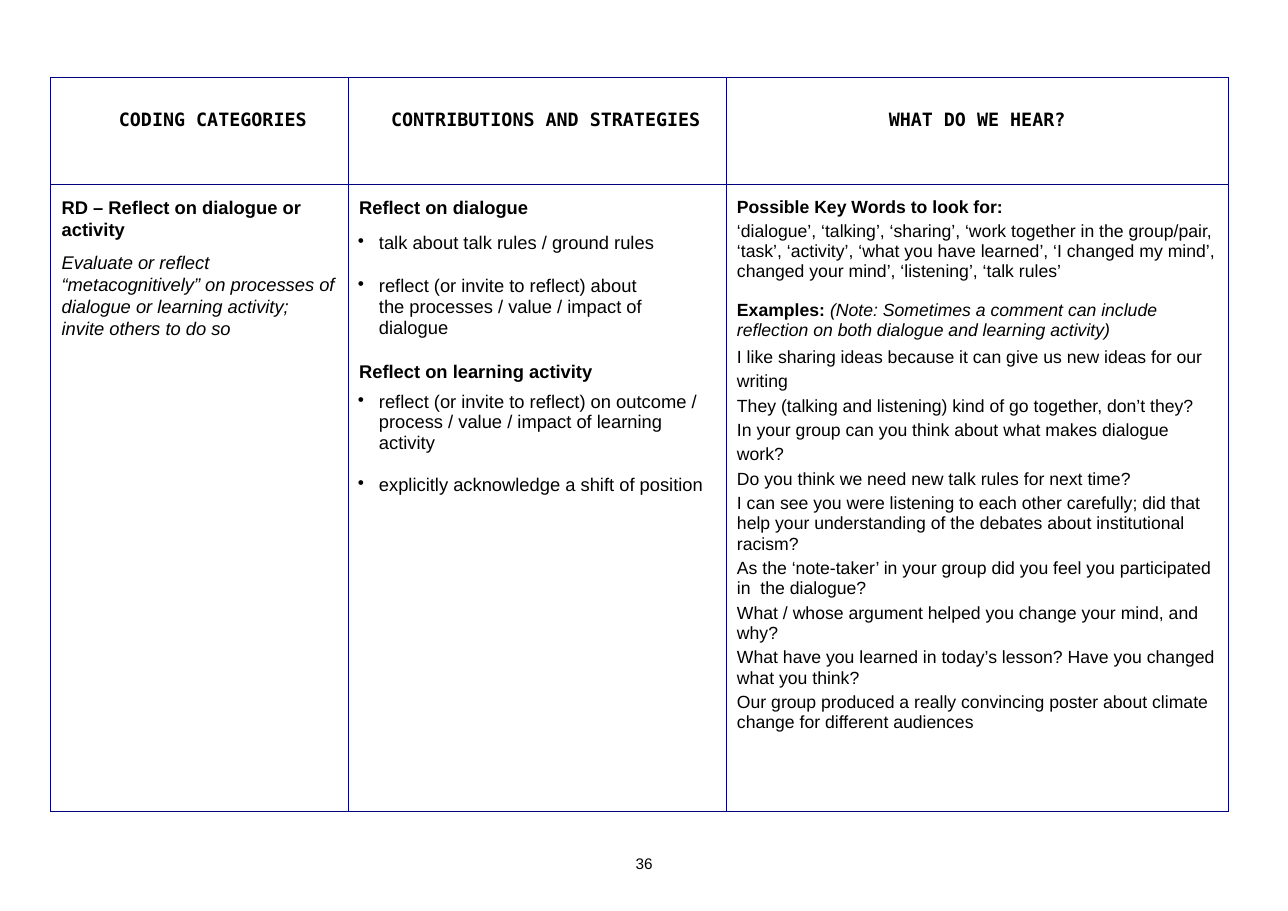
"""Build the dialogue coding table page for reflection on dialogue or activity."""
from lxml import etree
from pptx import Presentation
from pptx import util as u
from pptx.dml.color import RGBColor
from pptx.enum import text
from pptx.oxml.ns import qn

HUES = {"ink": "000000", "rule": "000080"}
SANS, MONO = "Arial", "DejaVu Sans Mono"
W, H = u.Inches(11.69), u.Inches(8.27)
PAD = u.Inches(0.1)
NBSP = chr(160)

deck = Presentation()
deck.slide_width, deck.slide_height = W, H
page = deck.slides.add_slide(deck.slide_layouts[6])


def put(frame, line, lead="", face=SANS, size=12, bold=False, slant=False,
        left=PAD, hang=0, gap=0, after=0, pitch=1.0, mark="", align=None):
    para = frame.paragraphs[0] if not frame.text else frame.add_paragraph()
    para.alignment = align
    para.space_before, para.space_after = u.Pt(gap), u.Pt(after)
    para.line_spacing = pitch
    props = para._p.get_or_add_pPr()
    props.set("marL", str(int(left)))
    props.set("indent", str(int(-hang)))
    if mark:
        etree.SubElement(props, qn("a:buChar")).set("char", mark)
    else:
        etree.SubElement(props, qn("a:buNone"))
    for words, heavy, lean in ((lead, True, False), (line, bold, slant)):
        if words:
            run = para.add_run()
            run.text = words
            font = run.font
            font.name, font.size = face, u.Pt(size)
            font.bold, font.italic = heavy, lean
            font.color.rgb = RGBColor.from_string(HUES["ink"])


def edge(cell):
    props = cell._tc.get_or_add_tcPr()
    for side in "LRTB":
        rule = etree.SubElement(props, qn(f"a:ln{side}"), w=str(u.Pt(0.48)))
        fill = etree.SubElement(rule, qn("a:solidFill"))
        etree.SubElement(fill, qn("a:srgbClr"), val=HUES["rule"])
    cell.fill.background()


cols = [int(W * share / 100) for share in (23.1, 29.34, 39.01)]
rows = [int(H * share / 100) for share in (11.73, 68.92)]
grid = page.shapes.add_table(2, 3, int(W * 3.93 / 100), int(H * 8.46 / 100),
                             sum(cols), sum(rows)).table
grid.first_row = grid.horz_banding = False
for col, wide in zip(grid.columns, cols):
    col.width = wide
for row, tall in zip(grid.rows, rows):
    row.height = tall

tops = ((0.29, 0.29, 0.29), (0.11, 0.13, 0.12))
rights = ((0, 0, 0), (0.11, 0.13, 0.12))
for r in range(2):
    for c in range(3):
        cell = grid.cell(r, c)
        cell.margin_left = cell.margin_bottom = 0
        cell.margin_top = u.Inches(tops[r][c])
        cell.margin_right = u.Inches(rights[r][c])
        edge(cell)

heads = (
    ("CODING CATEGORIES", 0.62, None),
    ("CONTRIBUTIONS AND STRATEGIES", 0.39, None),
    ("WHAT DO WE HEAR?", 0, text.PP_ALIGN.CENTER),
)
for c, (title, left, align) in enumerate(heads):
    put(grid.cell(0, c).text_frame, title, face=MONO, bold=True,
        left=u.Inches(left), align=align)

code, plan, talk = [grid.cell(1, c).text_frame for c in range(3)]

put(code, "RD – Reflect on dialogue or activity", bold=True, pitch=1.07)
put(code, "Evaluate or reflect “metacognitively” on processes of dialogue or "
    "learning activity; invite others to do so", slant=True, gap=7.7, pitch=1.07)

item = dict(left=u.Inches(0.28), hang=u.Inches(0.19), mark="•")
put(plan, "Reflect on dialogue", bold=True)
put(plan, "talk about talk rules / ground rules", gap=9.2, **item)
put(plan, f"reflect (or invite to reflect) about the{NBSP}processes / value / "
    "impact of dialogue", gap=14, pitch=1.04, **item)
put(plan, "Reflect on learning activity", bold=True, gap=14.3, pitch=1.04)
put(plan, "reflect (or invite to reflect) on outcome / process / value / impact "
    "of learning activity", gap=6, pitch=1.01, **item)
put(plan, "explicitly acknowledge a shift of position", gap=14, **item)

put(talk, "Possible Key Words to look for:", size=11.5, bold=True)
put(talk, "‘dialogue’, ‘talking’, ‘sharing’, ‘work together in the group/pair, "
    "‘task’, ‘activity’, ‘what you have learned’, ‘I changed my mind’, changed "
    "your mind’, ‘listening’, ‘talk rules’", size=11.5, gap=3, pitch=1.02)
put(talk, "(Note: Sometimes a comment can include reflection on both dialogue "
    "and learning activity)", lead="Examples: ", size=11.5, slant=True,
    gap=12.5, after=2)

loose = dict(pitch=1.24)
plain = dict(gap=3.2)
tight = dict(pitch=1.04, gap=2.4)
quotes = (
    ("I like sharing ideas because it can give us new ideas for our writing", loose),
    ("They (talking and listening) kind of go together, don’t they?", loose),
    ("In your group can you think about what makes dialogue work?", loose),
    ("Do you think we need new talk rules for next time?", plain),
    ("I can see you were listening to each other carefully; did that help your "
     "understanding of the debates about institutional racism?", tight),
    ("As the ‘note-taker’ in your group did you feel you participated in  the "
     "dialogue?", tight),
    ("What / whose argument helped you change your mind, and why?", tight),
    ("What have you learned in today’s lesson? Have you changed what you think?",
     tight),
    ("Our group produced a really convincing poster about climate change for "
     "different audiences", tight),
)
for quote, style in quotes:
    put(talk, quote, size=11.5, **style)

foot = page.shapes.add_textbox(int(W * 49.1 / 100), int(H * 93.71 / 100),
                               int(W * 1.8 / 100), int(H * 2.06 / 100)).text_frame
foot.margin_left = foot.margin_right = foot.margin_top = foot.margin_bottom = 0
foot.word_wrap = True
put(foot, "36", size=10, left=u.Inches(0.03))

deck.save("out.pptx")
